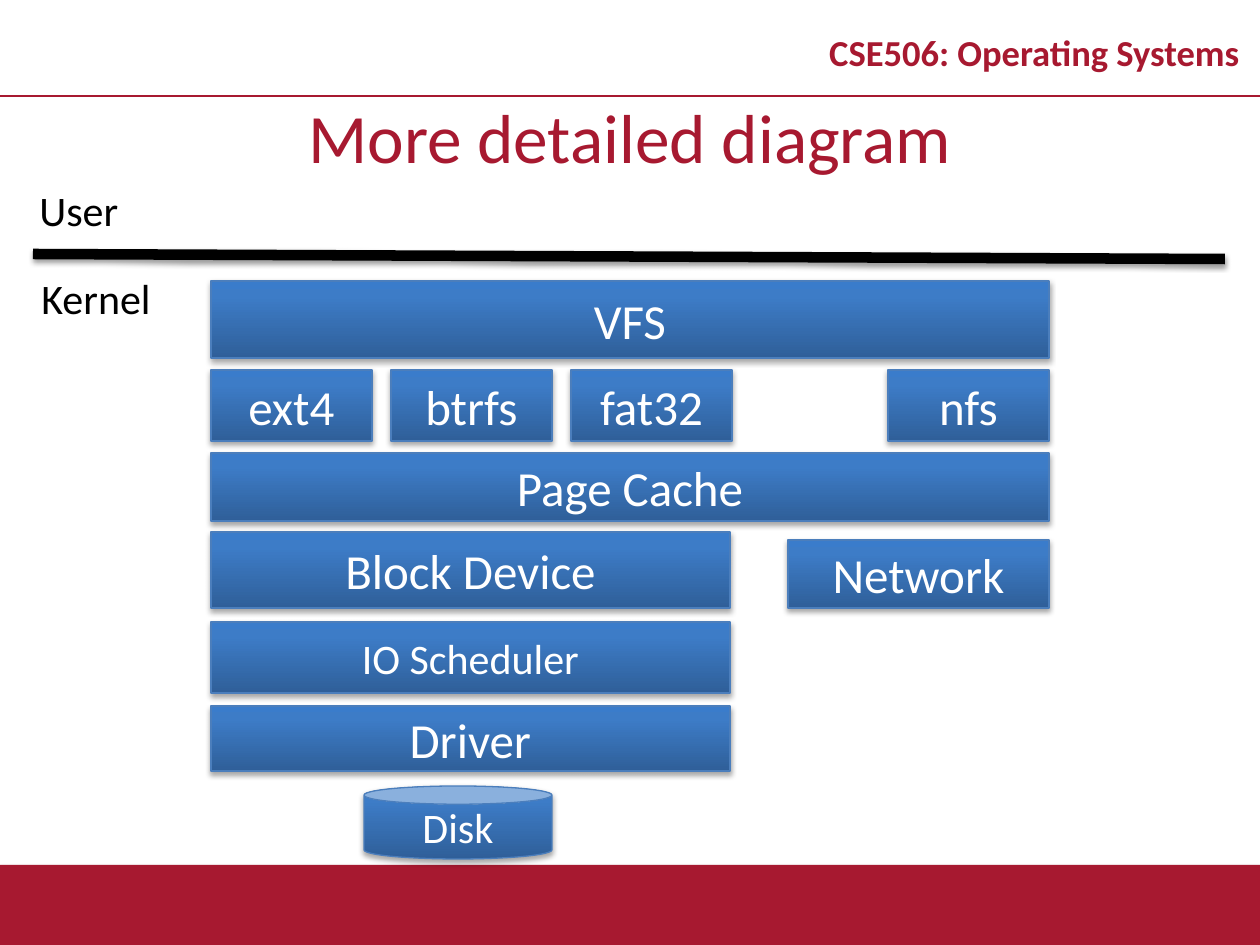
from lxml import etree
from pptx import Presentation
from pptx.dml.color import RGBColor
from pptx.enum.shapes import MSO_CONNECTOR, MSO_SHAPE
from pptx.enum.text import MSO_ANCHOR, MSO_AUTO_SIZE, PP_ALIGN
from pptx.oxml.ns import qn
from pptx.util import Pt

RECT, CAN = MSO_SHAPE.RECTANGLE, MSO_SHAPE.CAN
STRAIGHT = MSO_CONNECTOR.STRAIGHT
LEFT, CENTER = PP_ALIGN.LEFT, PP_ALIGN.CENTER
TOP, MIDDLE = MSO_ANCHOR.TOP, MSO_ANCHOR.MIDDLE
TITLE_ONLY = 5

CRIMSON, BLACK, WHITE = "A71930", "000000", "FFFFFF"
BLOCK_BORDER = "4B7EBC"
BLOCK_STOPS = [(0, "2F5F99"), (80, "3D7CC7"), (100, "3A7CCB")]

STACK_LEFT, STACK_RIGHT = 211, 1049
LOCAL_WIDTH = 519  # layers that serve the local disk only
FS_TOP, FS_WIDTH, FS_HEIGHT, FS_STEP = 370, 161, 71, 180


def px(length):
    return round(length * 914400 / 126)


def box(*lengths):
    return [px(length) for length in lengths]


def color(value):
    return RGBColor.from_string(value)


def add_effects(shape, alpha=None, dist=23000):
    """Give the shape a soft drop shadow, or none when alpha is None."""
    effects = etree.SubElement(shape._element.spPr, qn("a:effectLst"))
    if alpha is None:
        return
    shadow = etree.SubElement(effects, qn("a:outerShdw"), blurRad="40000",
                              dist=str(dist), dir="5400000", rotWithShape="0")
    black = etree.SubElement(shadow, qn("a:srgbClr"), val=BLACK)
    etree.SubElement(black, qn("a:alpha"), val=str(alpha * 1000))


def fill_gradient(shape):
    shape.fill.gradient()
    shape.fill.gradient_angle = 90
    stops = shape._element.spPr.find(".//" + qn("a:gsLst"))
    for stop in list(stops):
        stops.remove(stop)
    for position, value in BLOCK_STOPS:
        stop = etree.SubElement(stops, qn("a:gs"), pos=str(position * 1000))
        etree.SubElement(stop, qn("a:srgbClr"), val=value)


def write(shape, text, size=28, fill=BLACK, bold=False, align=LEFT,
          anchor=MIDDLE, wrap=True, spacing=None):
    frame = shape.text_frame
    frame.auto_size = MSO_AUTO_SIZE.NONE if wrap else MSO_AUTO_SIZE.SHAPE_TO_FIT_TEXT
    frame.word_wrap = wrap
    frame.vertical_anchor = anchor
    paragraph = frame.paragraphs[0]
    paragraph.alignment = align
    paragraph.line_spacing = spacing
    run = paragraph.add_run()
    run.text = text
    run.font.name = "Calibri"
    run.font.size = Pt(size)
    run.font.bold = bold
    run.font.color.rgb = color(fill)


def add_block(slide, text, left, top, width, height, size=28, kind=RECT):
    block = slide.shapes.add_shape(kind, *box(left, top, width, height))
    fill_gradient(block)
    block.line.color.rgb = color(BLOCK_BORDER)
    block.line.width = Pt(0.75)
    add_effects(block, alpha=35)
    write(block, text, size=size, fill=WHITE, align=CENTER)


def add_label(slide, text, left, top, width, height, **text_format):
    label = slide.shapes.add_textbox(*box(left, top, width, height))
    write(label, text, **text_format)


def add_rule(slide, start, end, fill, width, **shadow):
    rule = slide.shapes.add_connector(STRAIGHT, *box(*start, *end))
    rule.line.color.rgb = color(fill)
    rule.line.width = Pt(width)
    add_effects(rule, **shadow)


def add_frame(slide):
    footer = slide.shapes.add_shape(RECT, *box(0, 865, 1260, 80))
    footer.fill.solid()
    footer.fill.fore_color.rgb = color(CRIMSON)
    footer.line.fill.background()
    add_effects(footer, alpha=35)
    add_rule(slide, (0, 96), (1260, 96), CRIMSON, 1)
    add_label(slide, "CSE506: Operating Systems", 809, 16, 451, 80, size=20.9,
              fill=CRIMSON, bold=True, align=CENTER, spacing=0.8)


def main():
    deck = Presentation()
    deck.slide_width, deck.slide_height = box(1260, 945)
    slide = deck.slides.add_slide(deck.slide_layouts[TITLE_ONLY])

    # Course header, footer band and title
    add_frame(slide)
    title = slide.shapes.title
    title.left, title.top, title.width, title.height = box(0, 96, 1260, 80)
    write(title, "More detailed diagram", size=39.6, fill=CRIMSON, align=CENTER)

    # Layers across the full stack
    full_width = STACK_RIGHT - STACK_LEFT
    for layer, top, height in [("VFS", 281, 77), ("Page Cache", 453, 68)]:
        add_block(slide, layer, STACK_LEFT, top, full_width, height)

    # File systems: local ones in equal steps, the remote one at the right
    file_systems = [(name, STACK_LEFT + i * FS_STEP)
                    for i, name in enumerate(["ext4", "btrfs", "fat32"])]
    file_systems.append(("nfs", STACK_RIGHT - FS_WIDTH))
    for name, left in file_systems:
        add_block(slide, name, left, FS_TOP, FS_WIDTH, FS_HEIGHT)

    # Path to the local disk
    for layer, top, height, size in [("Block Device", 532, 76, 28),
                                     ("IO Scheduler", 622, 71, 24),
                                     ("Driver", 706, 65, 28)]:
        add_block(slide, layer, STACK_LEFT, top, LOCAL_WIDTH, height, size=size)
    add_block(slide, "Disk", 364, 786, 188, 73, size=24, kind=CAN)

    # Path to the remote server
    add_block(slide, "Network", 788, 540, STACK_RIGHT - 788, 68)

    # Boundary between user space and kernel
    add_rule(slide, (33, 254), (1225, 259), BLACK, 6, alpha=38, dist=20000)
    for space, left, top, width in [("User", 27, 178, 111), ("Kernel", 29, 266, 146)]:
        add_label(slide, space, left, top, width, 63, size=24, anchor=TOP, wrap=False)

    deck.save("out.pptx")


if __name__ == "__main__":
    main()
